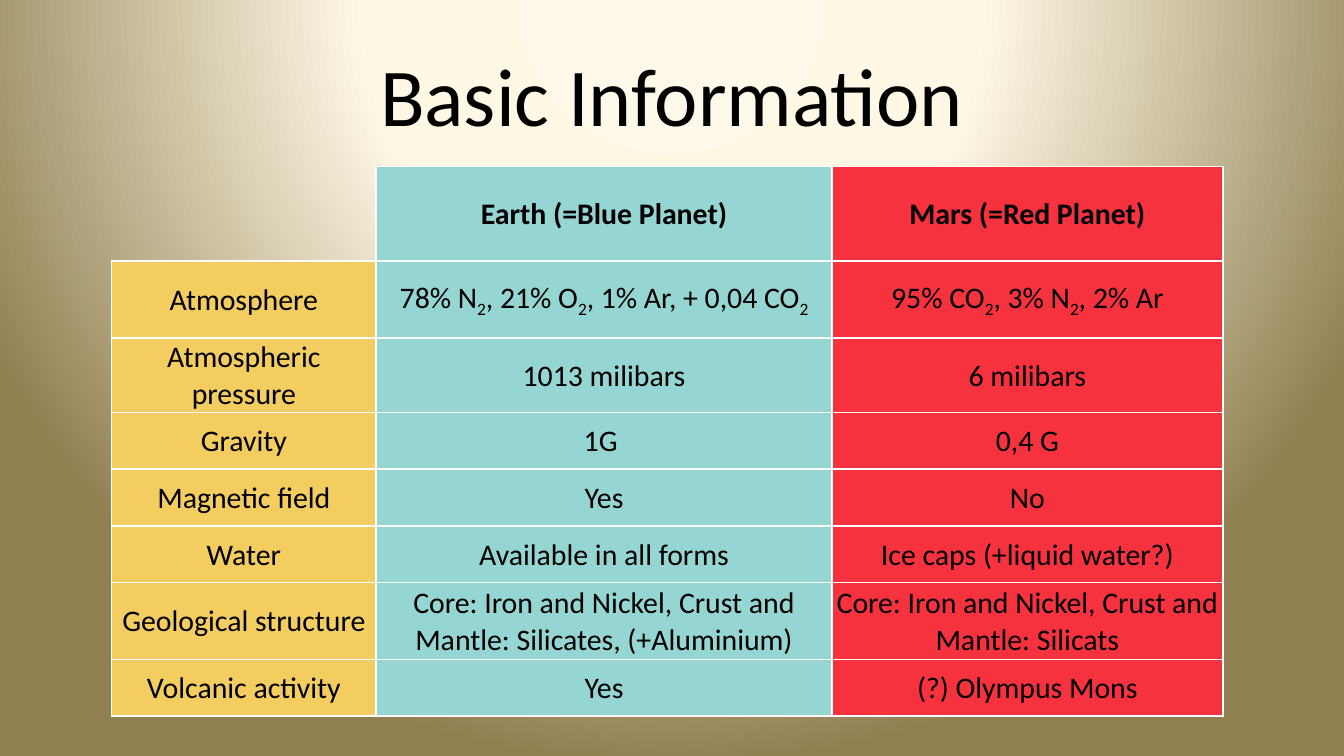
from pptx import Presentation, util as u
from pptx.dml.color import RGBColor
from pptx.enum import text
from pptx.oxml import parse_xml
from pptx.oxml.ns import nsdecls

COLORS = {"ink": "000000", "line": "FFFFFF", "label": "F3CD60", "earth": "95D6D3",
          "mars": "F5323E", "glow": "FFF9EA", "cream": "FFF8E5", "olive": "907F51"}


def add_run(p, words, size, bold=False):
    r = p.add_run()
    r.text = words
    for name, value in {"name": "Calibri", "size": u.Pt(size), "bold": bold}.items():
        setattr(r.font, name, value)
    r.font.color.rgb = RGBColor.from_string(COLORS["ink"])
    return r


def set_borders(cell, visible):
    for i, side in enumerate("LRTB"):
        paint = (f'<a:solidFill><a:srgbClr val="{COLORS["line"]}"/></a:solidFill>'
                 if side in visible else "<a:noFill/>")
        ln = f'<a:ln{side} {nsdecls("a")} w="{u.Pt(1)}">{paint}</a:ln{side}>'
        cell._tc.get_or_add_tcPr().insert(i, parse_xml(ln))


# Widescreen 16:9 slide
prs = Presentation()
prs.slide_width = u.Inches(10)
prs.slide_height = u.Inches(10 * 9 / 16)
s = prs.slides.add_slide(prs.slide_layouts[6])

# Background: circular glow centred above the slide
s.background.fill.gradient()
stops = "".join(f'<a:gs pos="{pos * 1000}"><a:srgbClr val="{COLORS[name]}"/></a:gs>'
                for pos, name in [(0, "glow"), (40, "cream"), (100, "olive")])
glow = parse_xml(
    f'<a:gradFill {nsdecls("a")} rotWithShape="1"><a:gsLst>{stops}</a:gsLst>'
    '<a:path path="circle"><a:fillToRect l="50000" t="-80000" r="50000" b="180000"/>'
    '</a:path></a:gradFill>')
old = s.element.xpath(".//p:bg//a:gradFill")[0]
old.getparent().replace(old, glow)

# Title
sp = s.shapes.add_textbox(u.Inches(0.5), u.Inches(0.23), u.Inches(9), u.Inches(0.94))
tf = sp.text_frame
tf.word_wrap = True
tf.vertical_anchor = text.MSO_ANCHOR.MIDDLE
p = tf.paragraphs[0]
p.alignment = text.PP_ALIGN.CENTER
add_run(p, "Basic Information", 44)

# Comparison table; underscores enclose subscripts
rows = [
    ("", "Earth (=Blue Planet)", "Mars (=Red Planet)"),
    ("Atmosphere", "78% N_2_, 21% O_2_, 1% Ar, + 0,04 CO_2_", "95% CO_2_, 3% N_2_, 2% Ar"),
    ("Atmospheric pressure", "1013 milibars", "6 milibars"),
    ("Gravity", "1G ", "0,4 G"),
    ("Magnetic field", "Yes", "No"),
    ("Water", "Available in all forms", "Ice caps (+liquid water?)"),
    ("Geological structure",
     "Core: Iron and Nickel, Crust and Mantle: Silicates, (+Aluminium)",
     "Core: Iron and Nickel, Crust and Mantle: Silicats"),
    ("Volcanic activity", "Yes", "(?) Olympus Mons"),
]
widths = [1.97, 3.39, 2.91]
table_height = 4.09
shares = [0.7, 0.57, 0.55, 0.42, 0.42, 0.42, 0.57, 0.42]
heights = [share * table_height / sum(shares) for share in shares]
cell_format = {"margin_left": u.Inches(0.01), "margin_right": u.Inches(0.01),
               "margin_top": u.Inches(0.01), "margin_bottom": 0,
               "vertical_anchor": text.MSO_ANCHOR.MIDDLE}

table = s.shapes.add_table(len(rows), len(widths), u.Inches(0.83), u.Inches(1.24),
                           u.Inches(sum(widths)), u.Inches(table_height)).table
table.first_row = table.horz_banding = False
for column, width in zip(table.columns, widths):
    column.width = u.Inches(width)

for i, (row, height) in enumerate(zip(rows, heights)):
    table.rows[i].height = u.Inches(height)
    for j, (words, fill) in enumerate(zip(row, ("label", "earth", "mars"))):
        cell = table.cell(i, j)
        for name, value in cell_format.items():
            setattr(cell, name, value)
        if not words:
            cell.fill.background()
            set_borders(cell, "RB")
            continue
        cell.fill.solid()
        cell.fill.fore_color.rgb = RGBColor.from_string(COLORS[fill])
        set_borders(cell, "LRTB")
        p = cell.text_frame.paragraphs[0]
        p.alignment = text.PP_ALIGN.CENTER
        for k, part in enumerate(words.split("_")):
            if part:
                r = add_run(p, part, 16, bold=i == 0)
                if k % 2:
                    r.font._element.set("baseline", "-25000")

prs.save("out.pptx")
